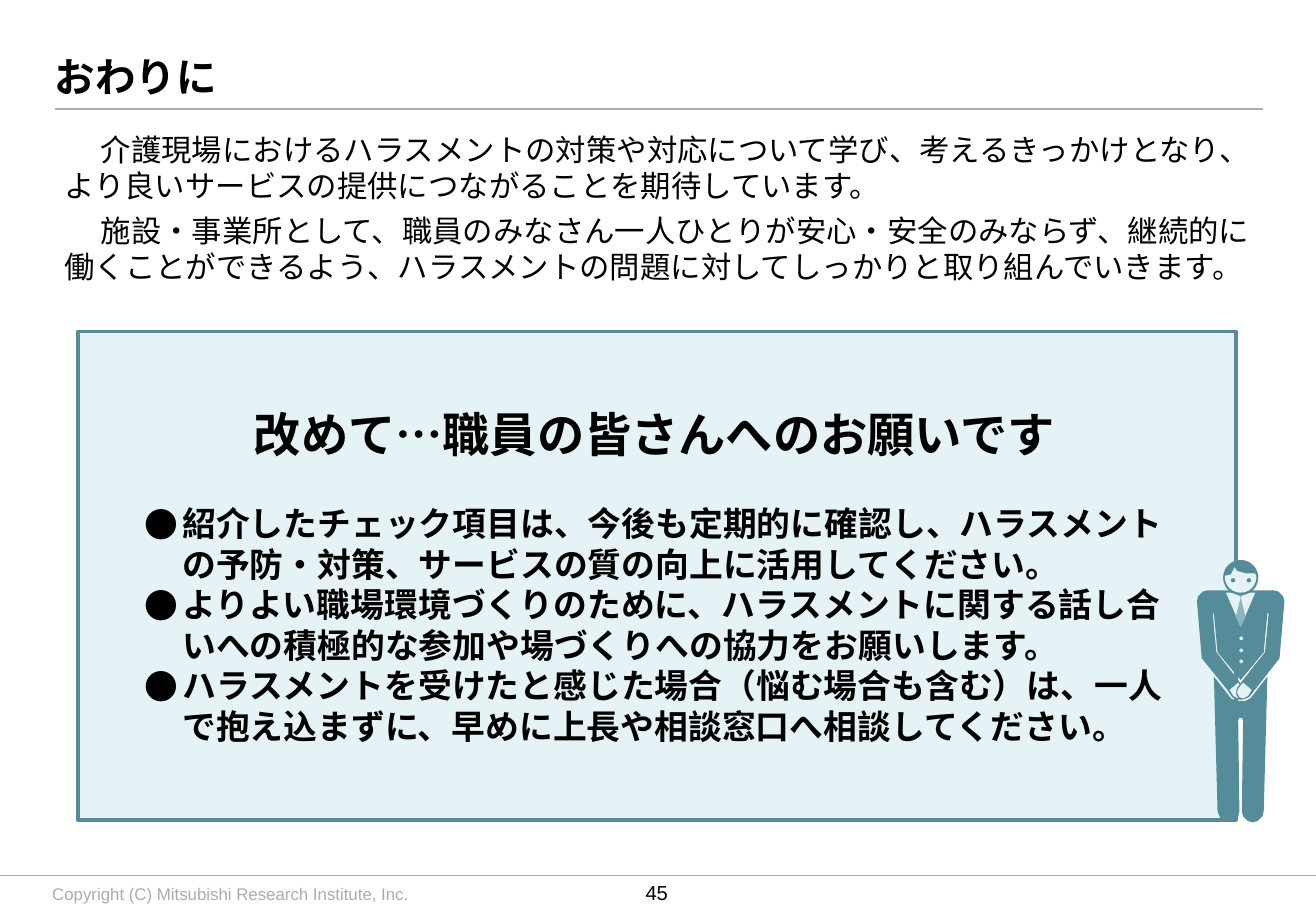
import math
from dataclasses import dataclass

import pptx
import pptx.util
import pptx.dml.color
import pptx.enum.shapes
import pptx.enum.text
import pptx.oxml

Inches = pptx.util.Inches
Pt = pptx.util.Pt
ALIGN = pptx.enum.text.PP_ALIGN
ANCHOR = pptx.enum.text.MSO_ANCHOR
SHAPE = pptx.enum.shapes.MSO_SHAPE
NS = 'xmlns:a="http://schemas.openxmlformats.org/drawingml/2006/main"'


@dataclass(frozen=True)
class Theme:
    teal: str = "558C99"
    pale: str = "E5F3F6"
    tie: str = "8AB6C1"
    gray: str = "ACACAC"
    ink: str = "000000"
    sans: str = "Arial"
    kanji: str = "Noto Sans CJK JP"
    title: float = 24
    body: float = 18
    head: float = 28
    item: float = 20
    foot: float = 10
    page: float = 12


THEME = Theme()


def rgb(code):
    return pptx.dml.color.RGBColor.from_string(code)


def element(xml):
    return pptx.oxml.parse_xml(xml)


def write(frame, text, size, font=THEME.kanji, color=THEME.ink, bold=False,
          align=ALIGN.LEFT, first=True, before=0, after=0, lead=None,
          left=0, indent=0, bullet=None):
    para = frame.paragraphs[0] if first else frame.add_paragraph()
    para.alignment = align
    para.space_before, para.space_after = Pt(before), Pt(after)
    if lead:
        para.line_spacing = Pt(lead)
    props = para._p.get_or_add_pPr()
    props.set("marL", str(Inches(left)))
    props.set("indent", str(Inches(indent)))
    if bullet:
        props.append(element(f'<a:buFont {NS} typeface="{font}"/>'))
        props.append(element(f'<a:buChar {NS} char="{bullet}"/>'))
    run = para.add_run()
    run.text = text
    run.font.name, run.font.size, run.font.bold = font, Pt(size), bold
    run.font.color.rgb = rgb(color)
    run._r.get_or_add_rPr().append(element(f'<a:ea {NS} typeface="{font}"/>'))


def setup(frame, anchor, pad=(0, 0, 0, 0)):
    frame.word_wrap = True
    frame.vertical_anchor = anchor
    (frame.margin_left, frame.margin_top,
     frame.margin_right, frame.margin_bottom) = map(Inches, pad)
    return frame


def textbox(slide, box, anchor=ANCHOR.MIDDLE):
    return setup(slide.shapes.add_textbox(*map(Inches, box)).text_frame, anchor)


def rule(slide, left, top, width, weight):
    line = slide.shapes.add_connector(
        pptx.enum.shapes.MSO_CONNECTOR.STRAIGHT,
        Inches(left), Inches(top), Inches(left + width), Inches(top))
    line.line.color.rgb = rgb(THEME.gray)
    line.line.width = Pt(weight)
    line._element.spPr.append(element(f"<a:effectLst {NS}/>"))


def paint(shape, fill, line=None, weight=0):
    shape.shadow.inherit = False
    shape.fill.solid()
    shape.fill.fore_color.rgb = rgb(fill)
    if line:
        shape.line.color.rgb = rgb(line)
        shape.line.width = Pt(weight)
    else:
        shape.line.fill.background()
    return shape


def header(slide, box):
    left, top, width, height = box
    write(textbox(slide, box), "おわりに", THEME.title, bold=True)
    rule(slide, left, top + height + 0.01, width, 1)


def intro(slide, box):
    frame = textbox(slide, box, ANCHOR.TOP)
    texts = (
        "介護現場におけるハラスメントの対策や対応について学び、考えるきっかけとなり、より良いサービスの提供につながることを期待しています。",
        "施設・事業所として、職員のみなさん一人ひとりが安心・安全のみならず、継続的に働くことができるよう、ハラスメントの問題に対してしっかりと取り組んでいきます。",
    )
    for i, text in enumerate(texts):
        write(frame, text, THEME.body, first=i == 0, before=4.8 if i else 0,
              lead=1.2 * THEME.body, indent=0.3)


def panel(slide, box):
    rect = slide.shapes.add_shape(SHAPE.RECTANGLE, *map(Inches, box))
    paint(rect, THEME.pale, THEME.teal, 2.25)
    frame = setup(rect.text_frame, ANCHOR.MIDDLE, (0.55, 0.39, 0.59, 0.39))
    write(frame, "改めて…職員の皆さんへのお願いです", THEME.head, bold=True,
          align=ALIGN.CENTER, after=24, lead=1.2 * THEME.head)
    items = (
        "紹介したチェック項目は、今後も定期的に確認し、ハラスメントの予防・対策、サービスの質の向上に活用してください。",
        "よりよい職場環境づくりのために、ハラスメントに関する話し合いへの積極的な参加や場づくりへの協力をお願いします。",
        "ハラスメントを受けたと感じた場合（悩む場合も含む）は、一人で抱え込まずに、早めに上長や相談窓口へ相談してください。",
    )
    for text in items:
        write(frame, text, THEME.item, bold=True, first=False,
              lead=1.2 * THEME.item, left=0.31, indent=-0.31, bullet="●")


def figure(slide, left, top):
    """Bowing man; parts are in hundredths of an inch from the corner."""
    shapes = slide.shapes.add_group_shape().shapes

    def spot(x, y):
        return Inches(left + x / 100), Inches(top + y / 100)

    def outline(fill, *loops):
        pen = shapes.build_freeform(*spot(*loops[0][0]))
        for i, loop in enumerate(loops):
            if i:
                pen.move_to(*spot(*loop[0]))
            pen.add_line_segments([spot(*p) for p in loop[1:]], close=True)
        paint(pen.convert_to_shape(), fill)

    def disc(fill, x, y, size):
        side = Inches(size / 100)
        paint(shapes.add_shape(SHAPE.OVAL, *spot(x, y), side, side), fill)

    # Coat with the gaps between arms and chest
    coat = [(63, 25), (9, 25), (5, 26), (1, 30), (0, 34), (4, 81), (25, 107),
            (29, 113), (32, 115), (38, 115), (43, 113), (68, 81), (72, 34),
            (71, 30), (67, 26)]
    gap = [(56, 76), (37, 100), (36, 102), (34, 99), (16, 76), (13, 44),
           (14, 44), (17, 76), (36, 99), (55, 76), (58, 44), (59, 44)]
    outline(THEME.teal, coat, gap)
    # Hands
    outline(THEME.pale, [(33, 105), (35, 103), (34, 101), (27, 107),
                         (30, 112), (34, 114), (32, 110)])
    outline(THEME.pale, [(35, 113), (38, 114), (42, 112), (45, 107),
                         (38, 101), (34, 106), (33, 109)])
    # Buttons
    for y in (63, 73, 82):
        disc(THEME.pale, 35, y, 3)
    # Legs
    outline(THEME.teal, [
        (28, 114), (14, 96), (17, 207), (19, 212), (23, 215), (26, 216),
        (30, 215), (34, 211), (35, 207), (34, 132), (35, 130), (37, 130),
        (38, 132), (37, 207), (38, 211), (42, 215), (46, 216), (50, 215),
        (54, 211), (55, 207), (58, 96), (44, 114), (40, 116), (32, 116)])
    # Collar and tie
    outline(THEME.pale, [(36, 29), (29, 27), (24, 27), (36, 55), (48, 27), (43, 27)])
    outline(THEME.tie, [(34, 29), (36, 31), (32, 47), (36, 55), (40, 47),
                        (36, 31), (38, 29)])
    # Head, face and eyes
    disc(THEME.teal, 21.5, 0, 29)
    chin = [(36 + 13 * math.cos(math.radians(a)), 14 + 13 * math.sin(math.radians(a)))
            for a in range(180, -1, -15)]
    outline(THEME.pale, [(48, 11), (40, 11), (33, 9), (31, 6), (28, 12), (23, 13)] + chin)
    for x in (28, 41):
        disc(THEME.teal, x, 15, 3.5)


def footer(slide, box):
    left, top, width, height = box
    rule(slide, left, top, width, 0.75)
    write(textbox(slide, (left + 0.43, top + 0.06, 5, 0.17)),
          "Copyright (C) Mitsubishi Research Institute, Inc.",
          THEME.foot, font=THEME.sans, color=THEME.gray)
    write(textbox(slide, (left + 5.15, top, 0.51, height)), "45",
          THEME.page, font=THEME.sans, align=ALIGN.CENTER)


def main():
    deck = pptx.Presentation()
    deck.slide_width, deck.slide_height = Inches(10.83), Inches(7.5)
    slide = deck.slides.add_slide(deck.slide_layouts[6])
    footer(slide, (0, 7.21, 10.83, 0.28))
    header(slide, (0.45, 0.36, 9.94, 0.53))
    intro(slide, (0.53, 1.08, 9.77, 1.28))
    panel(slide, (0.64, 2.73, 9.53, 4.02))
    figure(slide, 9.85, 4.61)
    deck.save("out.pptx")


if __name__ == "__main__":
    main()
